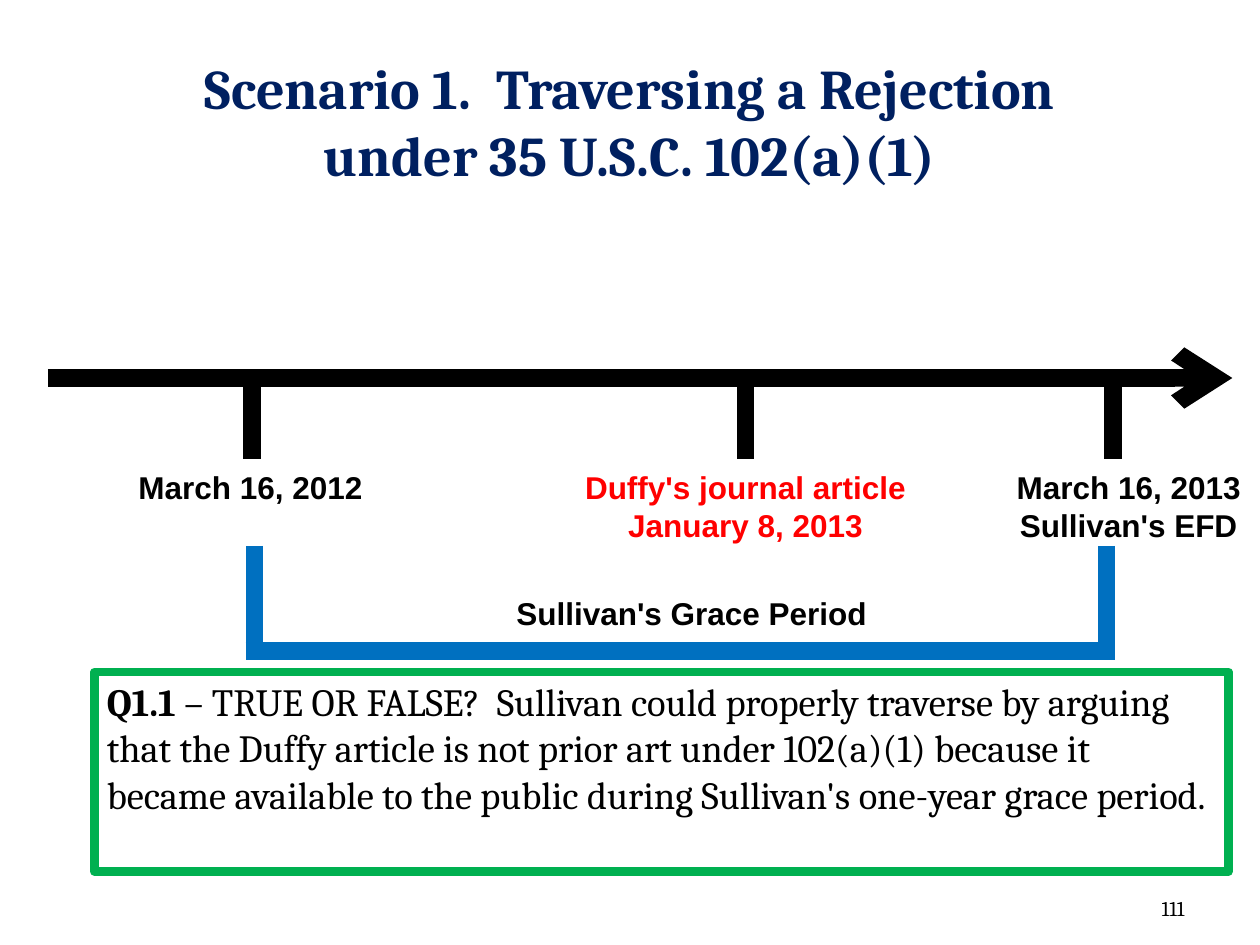
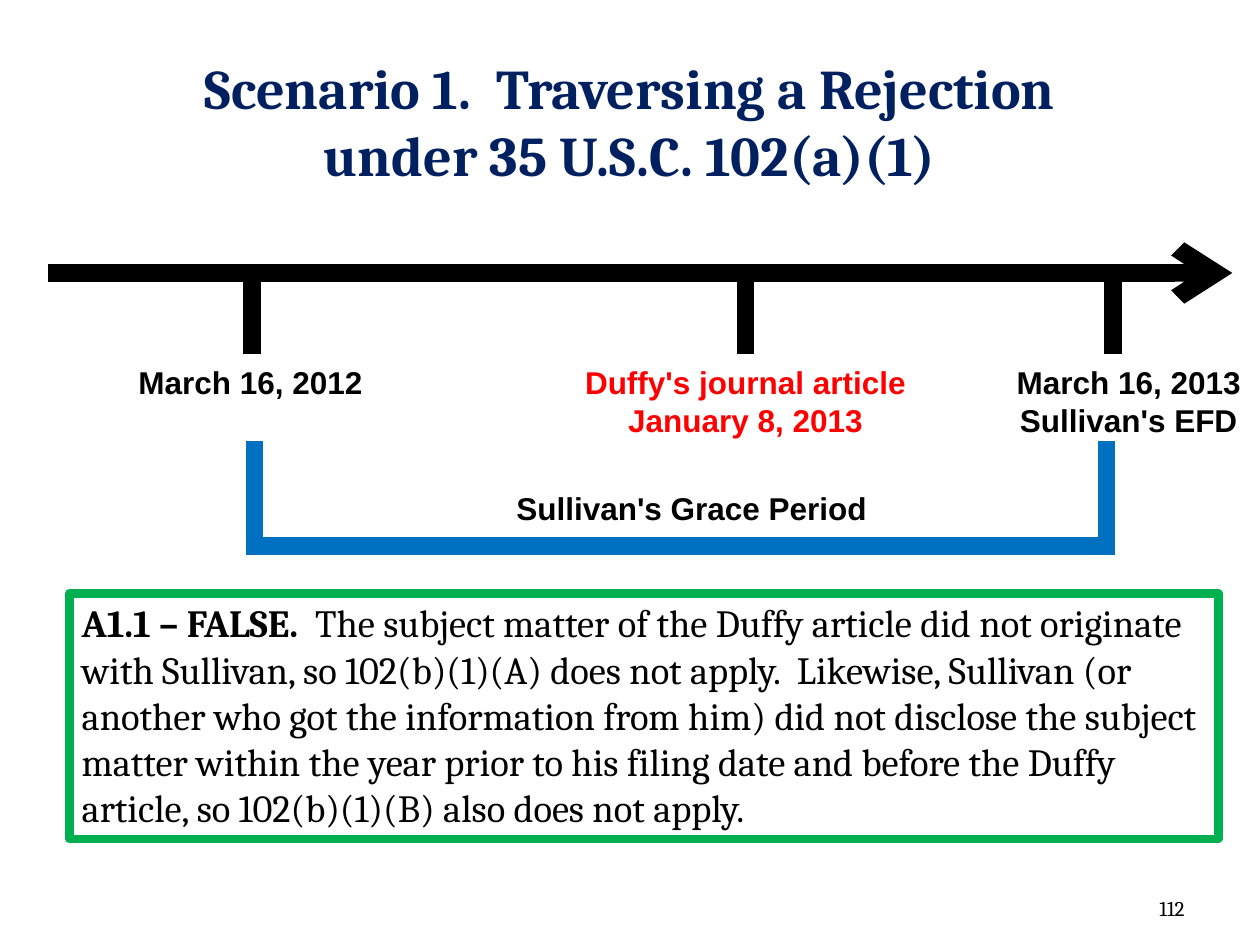
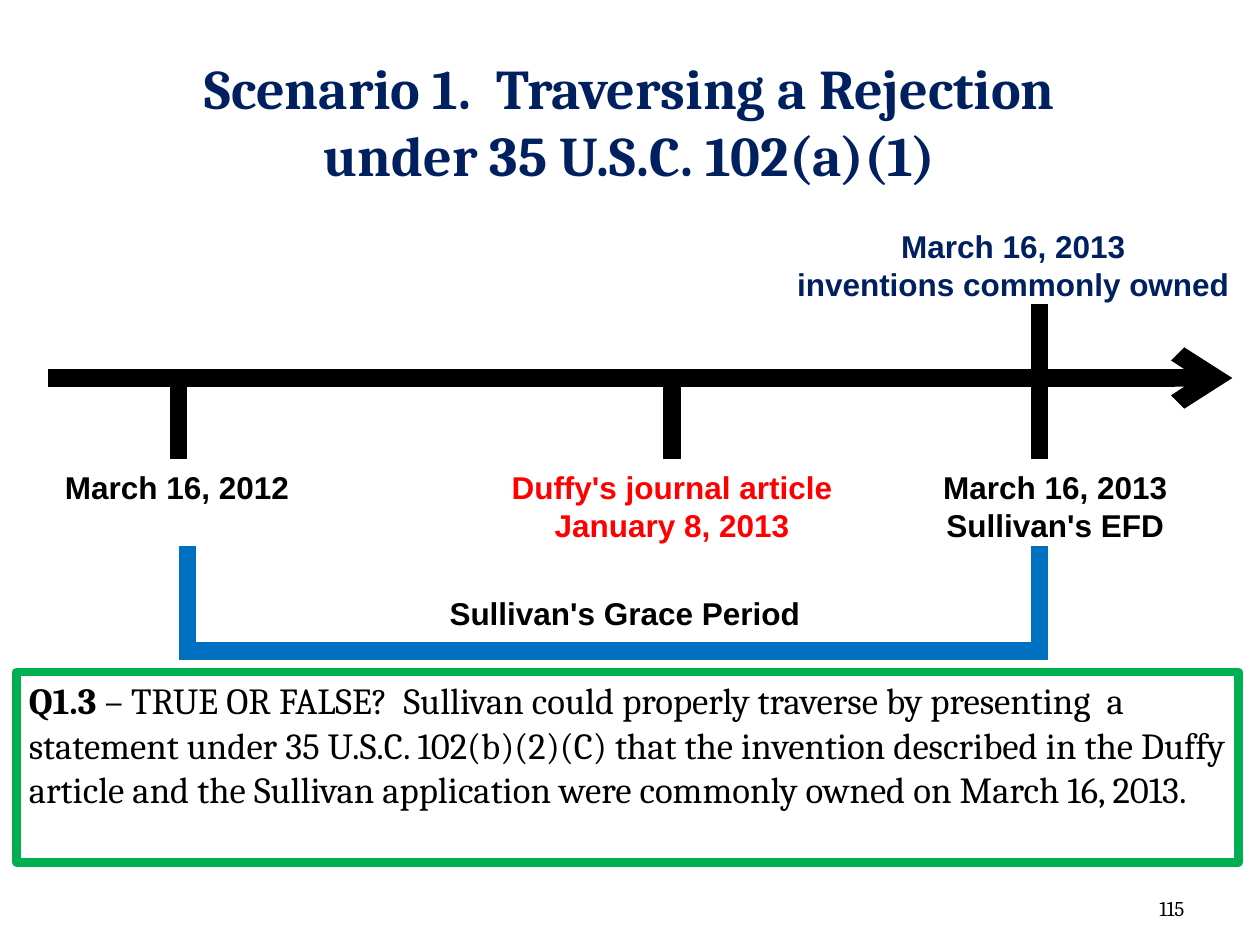
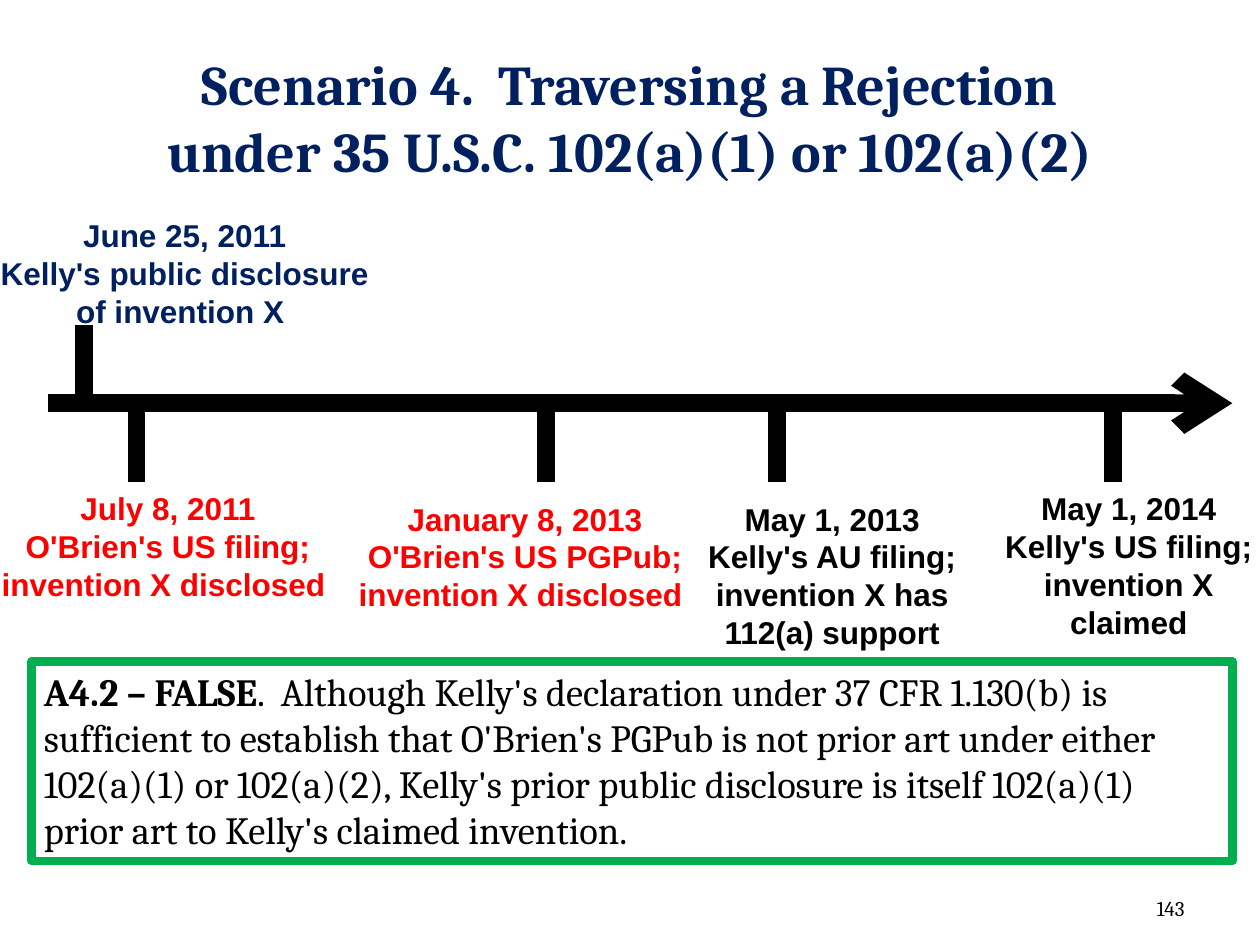
"""Build four timeline slides on traversing rejections under 35 U.S.C. 102."""
from lxml.etree import SubElement
from pptx import Presentation
from pptx.dml.color import RGBColor
from pptx.enum.shapes import MSO_CONNECTOR as Connector, MSO_SHAPE as Shape
from pptx.enum.text import MSO_ANCHOR as Anchor, MSO_AUTO_SIZE as AutoSize, PP_ALIGN as Align
from pptx.oxml.ns import qn
from pptx.util import Pt

NAVY, BLACK, RED, BLUE, GREEN = "002060", "000000", "FF0000", "0070C0", "00B050"
TITLE = {"name": "Cambria", "size": Pt(32), "bold": True}
NUMBER = {"name": "Cambria", "size": Pt(12), "bold": False}
LABEL = {"name": "Arial", "size": Pt(18), "bold": True}
TICK_LENGTH = 42
STROKE = 10

REJECTION_ONE = ["Scenario 1.  Traversing a Rejection", "under 35 U.S.C. 102(a)(1)"]
REJECTION_FOUR = ["Scenario 4.  Traversing a Rejection", "under 35 U.S.C. 102(a)(1) or 102(a)(2)"]

GRACE_TICKS = [(636, 4.3), (426, 4.3), (144, 4.3)]
GRACE_LABELS = [
    (["Duffy's journal article January 8, 2013"], (318, 48, 216, 51), RED, Align.CENTER),
    (["March 16, 2012"], (72, 48, 165, 29), BLACK, Align.LEFT),
    (["March 16, 2013", "Sullivan's EFD"], (564.5, 48, 161, 51), BLACK, Align.CENTER),
]
BRACKET_LINES = [(140.4, 156, 637.2, 156), (145.4, 96, 145.4, 153.4), (632.2, 96, 632.2, 156)]
BRACKET_LABEL = (["Sullivan's Grace Period"], (288, 120, 219.6, 29), BLACK, Align.LEFT)


def grace_period(shift=0, bracket_shift=0):
    """Return the ticks, labels and bracket of the grace period, moved sideways."""
    text, (left, top, width, height), colour, align = BRACKET_LABEL
    return {
        "ticks": [(x + shift, offset) for x, offset in GRACE_TICKS],
        "labels": [(lines, (x + shift, y, w, h), tint, side)
                   for lines, (x, y, w, h), tint, side in GRACE_LABELS]
        + [(text, (left + bracket_shift, top, width, height), colour, align)],
        "bracket": [(x1 + bracket_shift, y1, x2 + bracket_shift, y2)
                    for x1, y1, x2, y2 in BRACKET_LINES],
    }


COMMON_OWNER = grace_period(-42, -38.2)
COMMON_OWNER["ticks"].append((594, -42))
COMMON_OWNER["labels"].append(
    (["March 16, 2013", "inventions commonly owned"], (444, -90, 270, 51), NAVY, Align.CENTER))

DISCLOSURES = {
    "ticks": [(636, 3), (444, 3), (312, 3), (78, 3), (48, -44.4)],
    "labels": [
        (["January 8, 2013", "O'Brien's US PGPub; invention X disclosed "],
         (192, 51.6, 216, 73), RED, Align.CENTER),
        (["May 1, 2013", "Kelly's AU filing; invention X has 112(a) support"],
         (393, 51.6, 165, 94), BLACK, Align.CENTER),
        (["May 1, 2014", "Kelly's US filing; invention X claimed"],
         (564.5, 45.6, 161, 94), BLACK, Align.CENTER),
        (["July 8, 2011", "O'Brien's US filing; invention X disclosed "],
         (-12, 45.6, 216, 73), RED, Align.CENTER),
        (["June 25, 2011", "Kelly's public disclosure of invention X "],
         (-12, -110.4, 235, 73), NAVY, Align.CENTER),
    ],
    "bracket": [],
}

PAGES = [
    {"title": REJECTION_ONE, "title_top": 24, "number": "111", "axis": 216,
     "timeline": grace_period(), "frame": (54, 384, 648, 114), "size": 22,
     "lead": "Q1.1 ",
     "body": "– TRUE OR FALSE?  Sullivan could properly traverse by arguing that the Duffy "
             "article is not prior art under 102(a)(1) because it became available to the "
             "public during Sullivan's one-year grace period."},
    {"title": REJECTION_ONE, "title_top": 24, "number": "112", "axis": 156,
     "timeline": grace_period(), "frame": (39.6, 339, 656.6, 140.4), "size": 22,
     "lead": "A1.1 – FALSE.  ",
     "body": "The subject matter of the Duffy article did not originate with Sullivan, so "
             "102(b)(1)(A) does not apply.  Likewise, Sullivan (or another who got the "
             "information from him) did not disclose the subject matter within the year "
             "prior to his filing date and before the Duffy article, so 102(b)(1)(B) also "
             "does not apply."},
    {"title": REJECTION_ONE, "title_top": 24, "number": "115", "axis": 216,
     "timeline": COMMON_OWNER, "frame": (9.4, 384, 698.4, 108.7), "size": 21,
     "lead": "Q1.3 ",
     "body": "– TRUE OR FALSE?  Sullivan could properly traverse by presenting  a statement "
             "under 35 U.S.C. 102(b)(2)(C) that the invention described in the Duffy article "
             "and the Sullivan application were commonly owned on March 16, 2013."},
    {"title": REJECTION_FOUR, "title_top": 21.6, "number": "143", "axis": 230.4,
     "timeline": DISCLOSURES, "frame": (18, 378, 686.2, 114), "size": 22,
     "lead": "A4.2 – FALSE",
     "body": ".  Although Kelly's declaration under 37 CFR 1.130(b) is sufficient to establish "
             "that O'Brien's PGPub is not prior art under either 102(a)(1) or 102(a)(2), "
             "Kelly's prior public disclosure is itself 102(a)(1) prior art to Kelly's "
             "claimed invention."},
]


def paint(target, colour):
    """Give a font or line colour object a hex colour."""
    target.rgb = RGBColor.from_string(colour)


def write(para, text, style, colour):
    """Add a formatted run to a paragraph."""
    span = para.add_run()
    span.text = text
    for name, value in style.items():
        setattr(span.font, name, value)
    paint(span.font.color, colour)


def set_frame(box, anchor):
    """Make a text frame wrap, keep its size and use the given anchor."""
    frame = box.text_frame
    options = {"word_wrap": True, "auto_size": AutoSize.NONE, "vertical_anchor": anchor}
    for name, value in options.items():
        setattr(frame, name, value)
    return frame


def add_title(page, lines, top):
    """Place the two-line title in its placeholder."""
    box = page.shapes.title
    for name, value in zip(("left", "top", "width", "height"), (18, top, 684, 90)):
        setattr(box, name, Pt(value))
    para = set_frame(box, Anchor.MIDDLE).paragraphs[0]
    para.alignment = Align.CENTER
    for index, line in enumerate(lines):
        if index:
            para.add_line_break()
        write(para, line, TITLE, NAVY)


def add_text(page, lines, place, style, colour, align, anchor=Anchor.TOP):
    """Add a text box with one paragraph for each line."""
    box = page.shapes.add_textbox(*map(Pt, place))
    frame = set_frame(box, anchor)
    for index, line in enumerate(lines):
        para = frame.add_paragraph() if index else frame.paragraphs[0]
        para.alignment = align
        write(para, line, style, colour)


def add_answer(page, place, size, lead, body):
    """Add the green frame with its bold lead and plain body."""
    box = page.shapes.add_shape(Shape.RECTANGLE, *map(Pt, place))
    box.shadow.inherit = False
    box.fill.background()
    box.line.width = Pt(5)
    paint(box.line.color, GREEN)
    para = set_frame(box, Anchor.TOP).paragraphs[0]
    para.alignment = Align.LEFT
    for text, bold in ((lead, True), (body, False)):
        write(para, text, {"name": "Cambria", "size": Pt(size), "bold": bold}, BLACK)


def add_line(page, ends, colour, arrow=False):
    """Add a thick straight line, with an arrowhead if wanted."""
    line = page.shapes.add_connector(Connector.STRAIGHT, *map(Pt, ends))
    line.line.width = Pt(STROKE)
    paint(line.line.color, colour)
    properties = line.element.spPr
    if arrow:
        SubElement(properties.find(qn("a:ln")), qn("a:tailEnd"), type="arrow")
    SubElement(properties, qn("a:effectLst"))


def add_timeline(page, axis, timeline):
    """Draw the axis, its ticks, the bracket and the labels."""
    add_line(page, (27.4, axis, 704.2, axis), BLACK, arrow=True)
    for x, offset in timeline["ticks"]:
        add_line(page, (x, axis + offset, x, axis + offset + TICK_LENGTH), BLACK)
    for x1, y1, x2, y2 in timeline["bracket"]:
        add_line(page, (x1, axis + y1, x2, axis + y2), BLUE)
    for lines, (left, offset, width, height), colour, align in timeline["labels"]:
        add_text(page, lines, (left, axis + offset, width, height), LABEL, colour, align)


def main():
    """Build and save the deck."""
    deck = Presentation()
    deck.slide_width, deck.slide_height = Pt(720), Pt(540)
    for item in PAGES:
        page = deck.slides.add_slide(deck.slide_layouts.get_by_name("Title Only"))
        add_title(page, item["title"], item["title_top"])
        add_text(page, [item["number"]], (648, 492, 36, 37.4), NUMBER, BLACK,
                 Align.RIGHT, Anchor.BOTTOM)
        add_answer(page, item["frame"], item["size"], item["lead"], item["body"])
        add_timeline(page, item["axis"], item["timeline"])
    deck.save("out.pptx")


if __name__ == "__main__":
    main()
